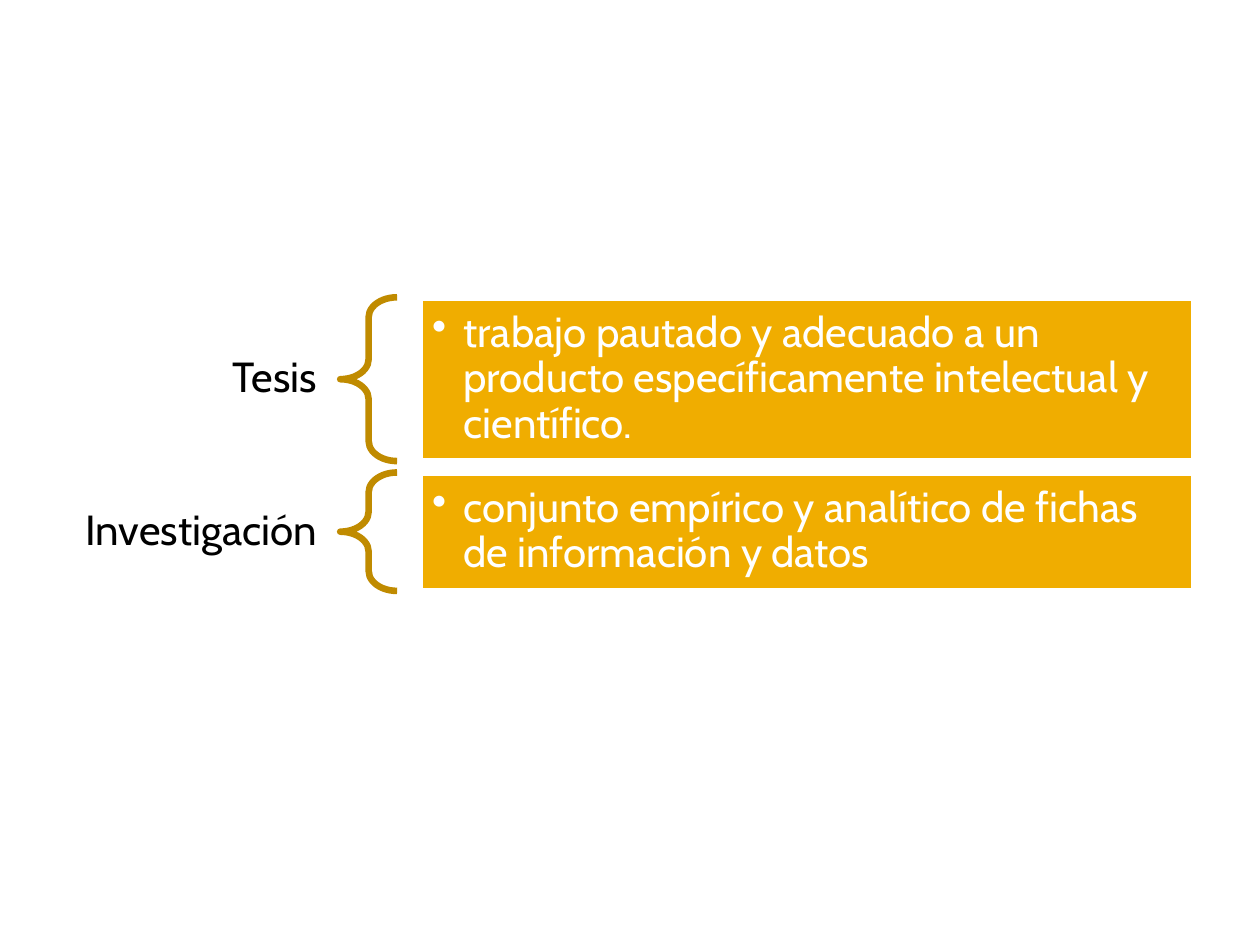
import pptx
import pptx.util
import pptx.dml.color
import pptx.enum.shapes
import pptx.enum.text
import pptx.oxml.ns
import lxml.etree

Pt = pptx.util.Pt
SHAPE = pptx.enum.shapes.MSO_SHAPE
ALIGN = pptx.enum.text.PP_ALIGN

COLORS = {"label": "000000", "brace": "C08B00", "box": "F0AD00", "white": "FFFFFF"}
ROWS = [
    ("Tesis", "trabajo pautado y adecuado a un producto específicamente intelectual y científico.", 93.6),
    ("Investigación", "conjunto empírico y analítico de fichas de información y datos", 67.7),
]
TOP, GAP = 169.9, 6.5
LABEL_X, LABEL_W, LABEL_H = 31.7, 162.7, 37.4
BRACE_X, BRACE_W = 194.4, 32.5
BOX_X, BOX_W = 239.8, 442.8
LINE_W = 3.78


def rgb(name):
    return pptx.dml.color.RGBColor.from_string(COLORS[name])


def write_text(sp, text, color, align, inset_x, inset_y):
    tf = sp.text_frame
    tf.word_wrap = True
    tf.vertical_anchor = pptx.enum.text.MSO_ANCHOR.MIDDLE
    tf.margin_left = tf.margin_right = Pt(inset_x)
    tf.margin_top = tf.margin_bottom = Pt(inset_y)
    p = tf.paragraphs[0]
    p.alignment = align
    p.line_spacing = 0.9
    r = p.add_run()
    r.text = text
    r.font.name = "Cabin"
    r.font.size = Pt(24)
    r.font.color.rgb = rgb(color)
    return p


def add_bullet(p, indent):
    pPr = p._p.get_or_add_pPr()
    pPr.set("marL", str(Pt(indent)))
    pPr.set("indent", str(-Pt(indent)))
    bullet = lxml.etree.SubElement(pPr, pptx.oxml.ns.qn("a:buChar"))
    bullet.set("char", "•")


def add_outlined(s, kind, x, y, w, h, line):
    sp = s.shapes.add_shape(kind, Pt(x), Pt(y), Pt(w), Pt(h))
    sp.shadow.inherit = False
    sp.line.color.rgb = rgb(line)
    sp.line.width = Pt(LINE_W)
    return sp


def add_label(s, text, middle):
    sp = s.shapes.add_textbox(Pt(LABEL_X), Pt(middle - LABEL_H / 2), Pt(LABEL_W), Pt(LABEL_H))
    write_text(sp, text, "label", ALIGN.RIGHT, 13.4, 4.8)


def add_brace(s, y, h):
    sp = add_outlined(s, SHAPE.LEFT_BRACE, BRACE_X, y, BRACE_W, h, "brace")
    sp.fill.background()
    sp.adjustments[0] = 0.35
    sp.adjustments[1] = 0.5


def add_box(s, text, y, h):
    sp = add_outlined(s, SHAPE.RECTANGLE, BOX_X, y, BOX_W, h, "white")
    sp.fill.solid()
    sp.fill.fore_color.rgb = rgb("box")
    p = write_text(sp, text, "white", ALIGN.LEFT, 7.2, 7.2)
    add_bullet(p, 18)


def main():
    prs = pptx.Presentation()
    prs.slide_width, prs.slide_height = Pt(720), Pt(540)
    s = prs.slides.add_slide(prs.slide_layouts[6])
    y = TOP
    for label, definition, h in ROWS:
        add_label(s, label, y + h / 2)
        add_brace(s, y, h)
        add_box(s, definition, y, h)
        y += h + GAP
    prs.save("out.pptx")


if __name__ == "__main__":
    main()
